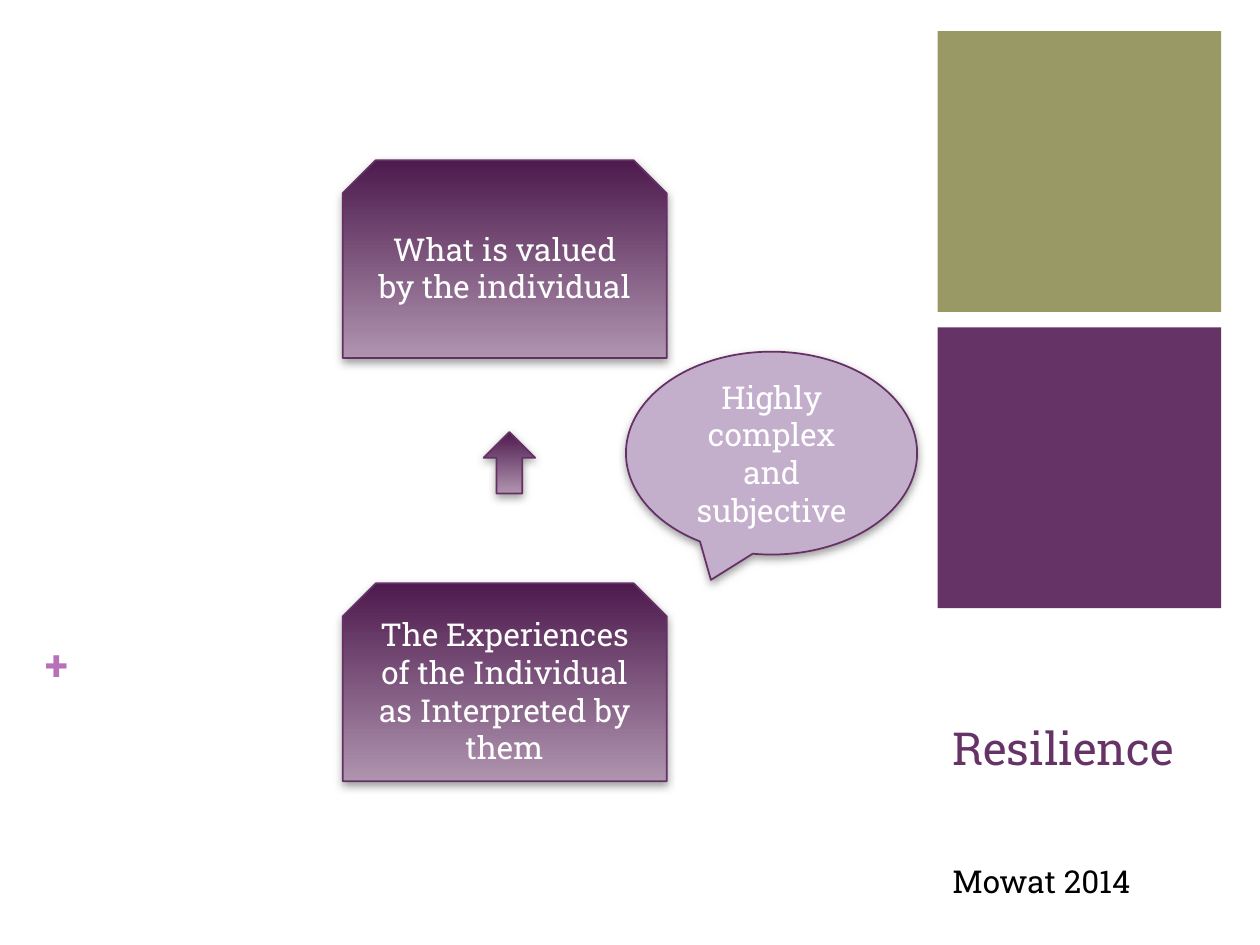
from lxml.etree import SubElement
from pptx import Presentation
from pptx.dml.color import RGBColor
from pptx.enum.shapes import MSO_SHAPE
from pptx.enum.text import MSO_ANCHOR, PP_ALIGN
from pptx.oxml.ns import qn
from pptx.util import Cm, Pt

FONT = "Roboto Slab"
OLIVE = RGBColor(0x99, 0x99, 0x66)
PURPLE = RGBColor(0x66, 0x33, 0x66)
OUTLINE = RGBColor(0x65, 0x31, 0x65)
DARK = RGBColor(0x4D, 0x1A, 0x4D)
LIGHT = RGBColor(0xAF, 0x94, 0xAF)
LILAC = RGBColor(0xC3, 0xAF, 0xCC)
PINK = RGBColor(0xB8, 0x70, 0xB8)
WHITE = RGBColor(0xFF, 0xFF, 0xFF)
BLACK = RGBColor(0, 0, 0)
SHADOW = RGBColor(0x80, 0x80, 0x80)


def write(shape, text, size, color, anchor, align=PP_ALIGN.LEFT, bold=False):
    tf = shape.text_frame
    tf.word_wrap = True
    tf.vertical_anchor = anchor
    p = tf.paragraphs[0]
    p.text = text
    p.alignment = align
    p.font.name, p.font.size, p.font.bold = FONT, Pt(size), bold
    p.font.color.rgb = color
    return tf


def add_label(s, box, text, size, color, anchor=MSO_ANCHOR.TOP, bold=False):
    tb = s.shapes.add_textbox(*map(Cm, box))
    return write(tb, text, size, color, anchor, bold=bold)


def add_block(s, kind, box, color):
    sp = s.shapes.add_shape(kind, *map(Cm, box))
    sp.shadow.inherit = False
    sp.fill.solid()
    sp.fill.fore_color.rgb = color
    sp.line.fill.background()
    return sp


def add_shadow(sp):
    effects = sp._element.spPr.find(qn("a:effectLst"))
    shadow = SubElement(effects, qn("a:outerShdw"), blurRad=str(Pt(5)),
                        dist=str(Pt(2)), dir="5400000", rotWithShape="0")
    color = SubElement(shadow, qn("a:srgbClr"), val=str(SHADOW))
    SubElement(color, qn("a:alpha"), val="75000")


def add_diagram_shape(s, kind, box, text=None, color=None):
    """Outlined, shadowed shape; filled with the purple gradient unless a color is given."""
    sp = add_block(s, kind, box, color or DARK)
    if color is None:
        sp.fill.gradient()
        sp.fill.gradient_angle = 270
        for stop, rgb in zip(sp.fill.gradient_stops, (DARK, LIGHT)):
            stop.color.rgb = rgb
    sp.line.color.rgb = OUTLINE
    sp.line.width = Pt(1)
    add_shadow(sp)
    if text:
        write(sp, text, 18, WHITE, MSO_ANCHOR.MIDDLE, PP_ALIGN.CENTER)


def main():
    prs = Presentation()
    prs.slide_width, prs.slide_height = Cm(25.4), Cm(19.05)
    s = prs.slides.add_slide(prs.slide_layouts[6])

    # Side squares
    for i, color in enumerate((OLIVE, PURPLE)):
        add_block(s, MSO_SHAPE.RECTANGLE, (18.9, 0.63 + 5.97 * i, 5.72, 5.66), color)

    # Plus sign, title and citation
    tf = add_label(s, (0.91, 12.88, 0.61, 1.02), "+", 24, PINK, bold=True)
    tf.margin_left = tf.margin_right = tf.margin_top = tf.margin_bottom = 0
    add_label(s, (18.95, 13.44, 5.59, 2.31), "Resilience", 26, PURPLE, MSO_ANCHOR.BOTTOM)
    add_label(s, (18.95, 17.25, 5.59, 1.02), "Mowat 2014", 18, BLACK)

    # Diagram: experiences lead up to what is valued
    boxes = ((3.23, "What is valued by the individual"),
             (11.76, "The Experiences of the Individual as Interpreted by them"))
    for top, text in boxes:
        add_diagram_shape(s, MSO_SHAPE.SNIP_2_SAME_RECTANGLE, (6.91, top, 6.53, 3.99), text)
    add_diagram_shape(s, MSO_SHAPE.UP_ARROW, (9.75, 8.71, 1.04, 1.24))
    add_diagram_shape(s, MSO_SHAPE.OVAL_CALLOUT, (12.62, 7.09, 5.87, 4.09),
                      "Highly complex and subjective", LILAC)

    prs.save("out.pptx")


if __name__ == "__main__":
    main()
